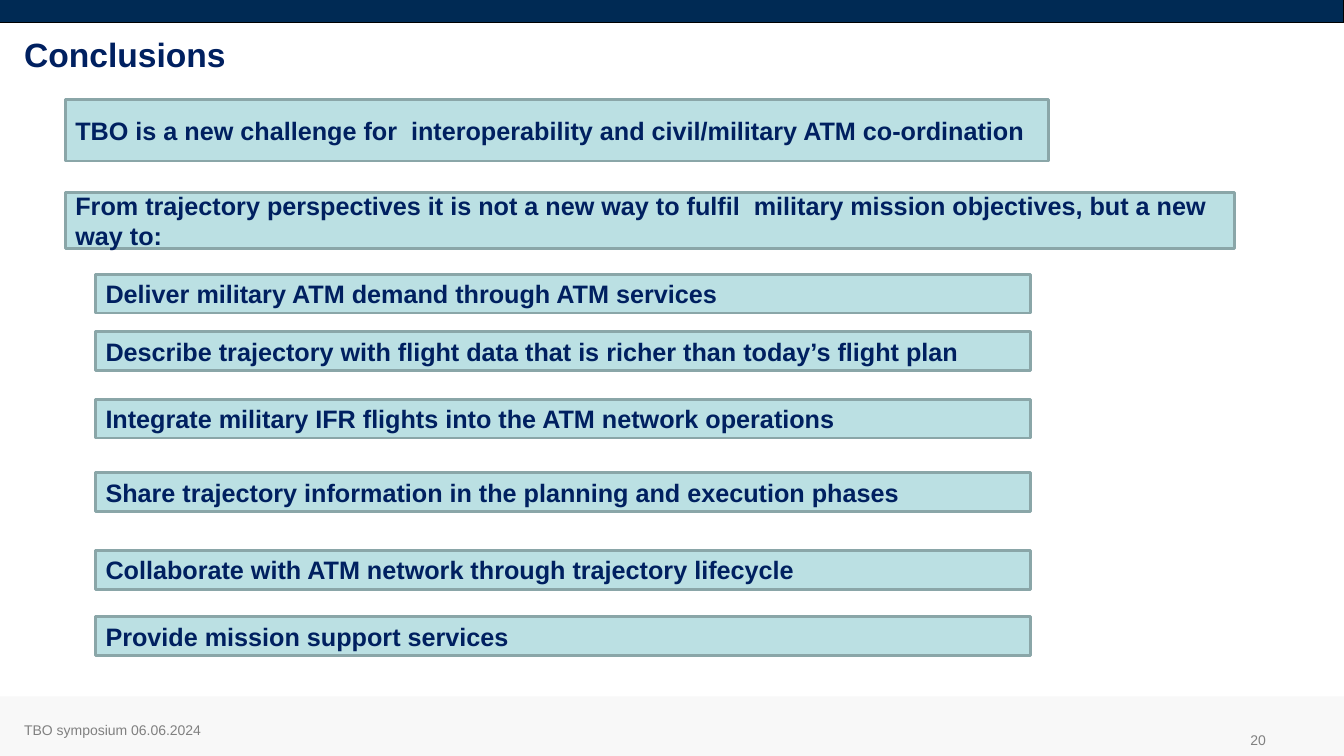
from dataclasses import dataclass
from typing import Any

from pptx import Presentation
from pptx import util as u
from pptx.dml.color import RGBColor
from pptx.enum import shapes, text

HUES = {
    "navy": "002A54", "pale": "F8F8F8", "black": "000000", "grey": "808080",
    "ink": "002060", "aqua": "BBE0E3", "edge": "8AA6A8",
}


@dataclass(frozen=True)
class Style:
    size: int
    hue: str
    bold: bool = False
    align: Any = text.PP_ALIGN.LEFT


@dataclass(frozen=True)
class Box:
    left: float
    top: float
    width: float
    height: float
    words: str = ""
    style: Style | None = None
    fill: str | None = None
    line: str | None = None
    weight: float = 2


HEAD = Style(24, "ink", True)
BODY = Style(18, "ink", True)
FOOT = Style(10, "grey")
PAGE = Style(10, "grey", align=text.PP_ALIGN.RIGHT)

STEPS = [
    (6.91, "Deliver military ATM demand through ATM services"),
    (8.36, "Describe trajectory with flight data that is richer than today’s flight plan"),
    (10.06, "Integrate military IFR flights into the ATM network operations"),
    (11.91, "Share trajectory information in the planning and execution phases"),
    (13.87, "Collaborate with ATM network through trajectory lifecycle"),
    (15.54, "Provide mission support services"),
]

BOXES = [
    Box(0, 0, 33.87, 0.58, fill="navy", line="black", weight=0.75),
    Box(0, 17.55, 33.87, 1.5, fill="pale"),
    Box(0.36, 18.01, 5.84, 0.76, "TBO symposium 06.06.2024", FOOT),
    Box(30.4, 18.26, 1.75, 0.76, "20", PAGE),
    Box(0.36, 0.74, 6.86, 1.27, "Conclusions", HEAD),
    Box(1.65, 2.51, 24.77, 1.55,
        "TBO is a new challenge for  interoperability and civil/military ATM co-ordination",
        BODY, "aqua", "edge"),
    Box(1.65, 4.85, 29.46, 1.42,
        "From trajectory perspectives it is not a new way to fulfil  military mission "
        "objectives, but a new way to:",
        BODY, "aqua", "edge"),
] + [Box(2.41, top, 23.57, 0.98, words, BODY, "aqua", "edge") for top, words in STEPS]


def tint(name: str) -> RGBColor:
    return RGBColor.from_string(HUES[name])


def apply(item: Any, values: dict[str, Any]) -> None:
    for key, value in values.items():
        setattr(item, key, value)


def write(frame: Any, words: str, style: Style) -> None:
    apply(frame, {"word_wrap": True, "vertical_anchor": text.MSO_ANCHOR.MIDDLE})
    para = frame.paragraphs[0]
    para.alignment = style.align
    run = para.add_run()
    run.text = words
    apply(run.font, {"name": "Arial", "size": u.Pt(style.size), "bold": style.bold})
    run.font.color.rgb = tint(style.hue)


def draw(slide: Any, box: Box) -> None:
    area = [u.Cm(n) for n in (box.left, box.top, box.width, box.height)]
    if box.fill:
        shape = slide.shapes.add_shape(shapes.MSO_SHAPE.RECTANGLE, *area)
        shape.shadow.inherit = False
        shape.fill.solid()
        shape.fill.fore_color.rgb = tint(box.fill)
        if box.line:
            shape.line.color.rgb = tint(box.line)
            shape.line.width = u.Pt(box.weight)
        else:
            shape.line.fill.background()
    else:
        shape = slide.shapes.add_textbox(*area)
    if box.style:
        write(shape.text_frame, box.words, box.style)


def main() -> None:
    deck = Presentation()
    apply(deck, {"slide_width": u.Cm(33.87), "slide_height": u.Cm(19.05)})
    slide = deck.slides.add_slide(deck.slide_layouts[6])
    for box in BOXES:
        draw(slide, box)
    deck.save("out.pptx")


if __name__ == "__main__":
    main()
